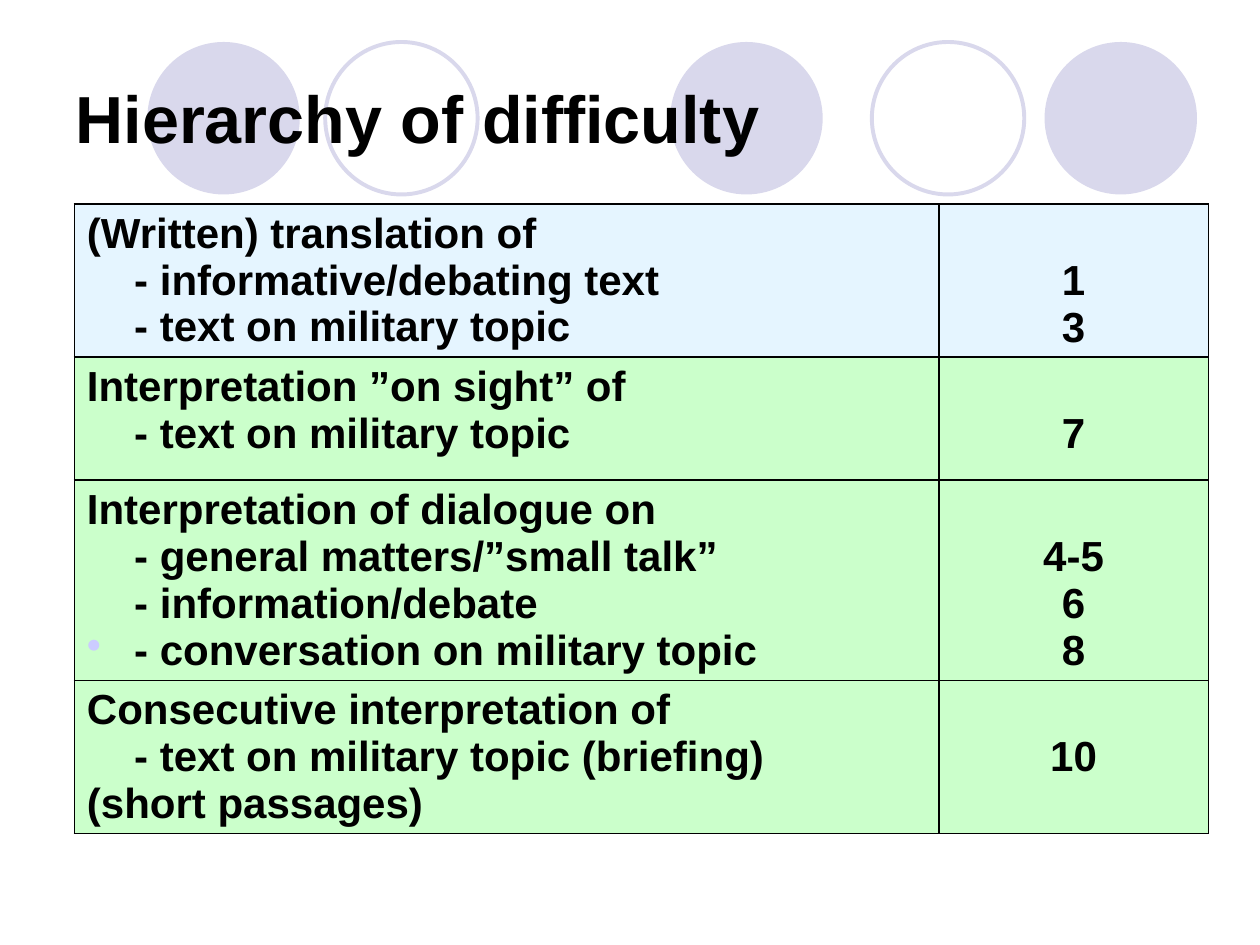
from dataclasses import dataclass

from lxml.etree import SubElement
from pptx import Presentation
from pptx.dml.color import RGBColor
from pptx.enum.shapes import MSO_SHAPE
from pptx.enum.text import MSO_ANCHOR, MSO_AUTO_SIZE, PP_ALIGN
from pptx.oxml.ns import qn
from pptx.util import Pt

FONT = "Arial"
BLACK = "000000"
LAVENDER = "D9D8EC"
BULLET_COLOR = "CCCCFF"
BLUE = "CCECFF"
GREEN = "99FF99"
BODY_SIZE = 24
LINE_HEIGHT = 26.8
CELL_MARGIN = 3.6
INDENT = 27


@dataclass(frozen=True)
class Circle:
    left: float
    filled: bool


@dataclass(frozen=True)
class Entry:
    lines: tuple[str, ...]
    bulleted: bool = False


@dataclass(frozen=True)
class DifficultyRow:
    entries: tuple[Entry, ...]
    levels: tuple[str, ...]
    color: str
    height: float


CIRCLES = (
    Circle(383, True),
    Circle(596.9, True),
    Circle(84.2, True),
    Circle(498.2, False),
    Circle(185.8, False),
)

ROWS = (
    DifficultyRow(
        (Entry(("(Written) translation of", "- informative/debating text", "- text on military topic")),),
        ("1", "3"), BLUE, 87.4,
    ),
    DifficultyRow(
        (Entry(("Interpretation ”on sight” of",)), Entry(("\t- text on military topic",))),
        ("7",), GREEN, 70.3,
    ),
    DifficultyRow(
        (
            Entry(("Interpretation of dialogue on", "- general matters/”small talk”", "- information/debate")),
            Entry(("- conversation on military topic",), bulleted=True),
        ),
        ("4-5", "6", "8"), GREEN, 114.3,
    ),
    DifficultyRow(
        (
            Entry(("Consecutive interpretation of", "- text on military topic (briefing)")),
            Entry(("(short passages)",)),
        ),
        ("10",), GREEN, 87.4,
    ),
)


def set_color(color_format, value: str) -> None:
    color_format.rgb = RGBColor.from_string(value)


def add_run(paragraph, text: str, size: float) -> None:
    run = paragraph.add_run()
    run.text = text
    run.font.name = FONT
    run.font.size = Pt(size)
    run.font.bold = True
    run.font.fill.solid()
    set_color(run.font.fill.fore_color, BLACK)


def add_circle(slide, circle: Circle) -> None:
    shape = slide.shapes.add_shape(MSO_SHAPE.OVAL, Pt(circle.left), Pt(24), Pt(87.1), Pt(87.1))
    shape.shadow.inherit = False
    if circle.filled:
        shape.fill.solid()
        set_color(shape.fill.fore_color, LAVENDER)
        shape.line.fill.background()
    else:
        shape.fill.background()
        shape.line.width = Pt(2.25)
        set_color(shape.line.color, LAVENDER)


def format_title(slide) -> None:
    title = slide.shapes.title
    title.left, title.top, title.width, title.height = Pt(36), Pt(21.6), Pt(648), Pt(90)
    frame = title.text_frame
    frame.auto_size = MSO_AUTO_SIZE.NONE
    frame.vertical_anchor = MSO_ANCHOR.MIDDLE
    paragraph = frame.paragraphs[0]
    paragraph.alignment = PP_ALIGN.LEFT
    add_run(paragraph, "Hierarchy of difficulty", 38)
    slide.shapes._spTree.append(title._element)


def style_cell(cell, color: str) -> None:
    properties = cell._tc.get_or_add_tcPr()
    for side in ("a:lnL", "a:lnR", "a:lnT", "a:lnB"):
        line = SubElement(properties, qn(side), w=str(Pt(1)))
        SubElement(SubElement(line, qn("a:solidFill")), qn("a:srgbClr"), val=BLACK)
    cell.fill.solid()
    set_color(cell.fill.fore_color, color)
    SubElement(properties.find(f"{qn('a:solidFill')}/{qn('a:srgbClr')}"), qn("a:alpha"), val="50000")
    cell.margin_top = cell.margin_bottom = Pt(CELL_MARGIN)


def set_hanging_indent(paragraph, bulleted: bool) -> None:
    properties = paragraph._p.get_or_add_pPr()
    properties.set("marL", str(Pt(INDENT)))
    properties.set("indent", str(-Pt(INDENT)))
    if bulleted:
        SubElement(SubElement(properties, qn("a:buClr")), qn("a:srgbClr"), val=BULLET_COLOR)
        SubElement(properties, qn("a:buChar"), char="•")
    else:
        SubElement(properties, qn("a:buNone"))


def get_paragraph(frame, index: int):
    return frame.add_paragraph() if index else frame.paragraphs[0]


def fill_tasks(cell, entries: tuple[Entry, ...]) -> None:
    for index, entry in enumerate(entries):
        paragraph = get_paragraph(cell.text_frame, index)
        set_hanging_indent(paragraph, entry.bulleted)
        for number, line in enumerate(entry.lines):
            if number:
                paragraph.add_line_break()
            add_run(paragraph, line, BODY_SIZE)


def fill_levels(cell, levels: tuple[str, ...]) -> None:
    cell.margin_top = Pt(CELL_MARGIN + LINE_HEIGHT)
    for index, level in enumerate(levels):
        paragraph = get_paragraph(cell.text_frame, index)
        paragraph.alignment = PP_ALIGN.CENTER
        add_run(paragraph, level, BODY_SIZE)


def add_difficulty_table(slide) -> None:
    height = sum(row.height for row in ROWS)
    table = slide.shapes.add_table(len(ROWS), 2, Pt(42.5), Pt(116.6), Pt(648), Pt(height)).table
    table.first_row = table.horz_banding = False
    table.columns[0].width, table.columns[1].width = Pt(494), Pt(154)
    for index, row in enumerate(ROWS):
        table.rows[index].height = Pt(row.height)
        task_cell, level_cell = table.cell(index, 0), table.cell(index, 1)
        for cell in (task_cell, level_cell):
            style_cell(cell, row.color)
        fill_tasks(task_cell, row.entries)
        fill_levels(level_cell, row.levels)


def main() -> None:
    presentation = Presentation()
    presentation.slide_width, presentation.slide_height = Pt(720), Pt(540)
    slide = presentation.slides.add_slide(presentation.slide_layouts[5])
    for circle in CIRCLES:
        add_circle(slide, circle)
    format_title(slide)
    add_difficulty_table(slide)
    presentation.save("out.pptx")


if __name__ == "__main__":
    main()
